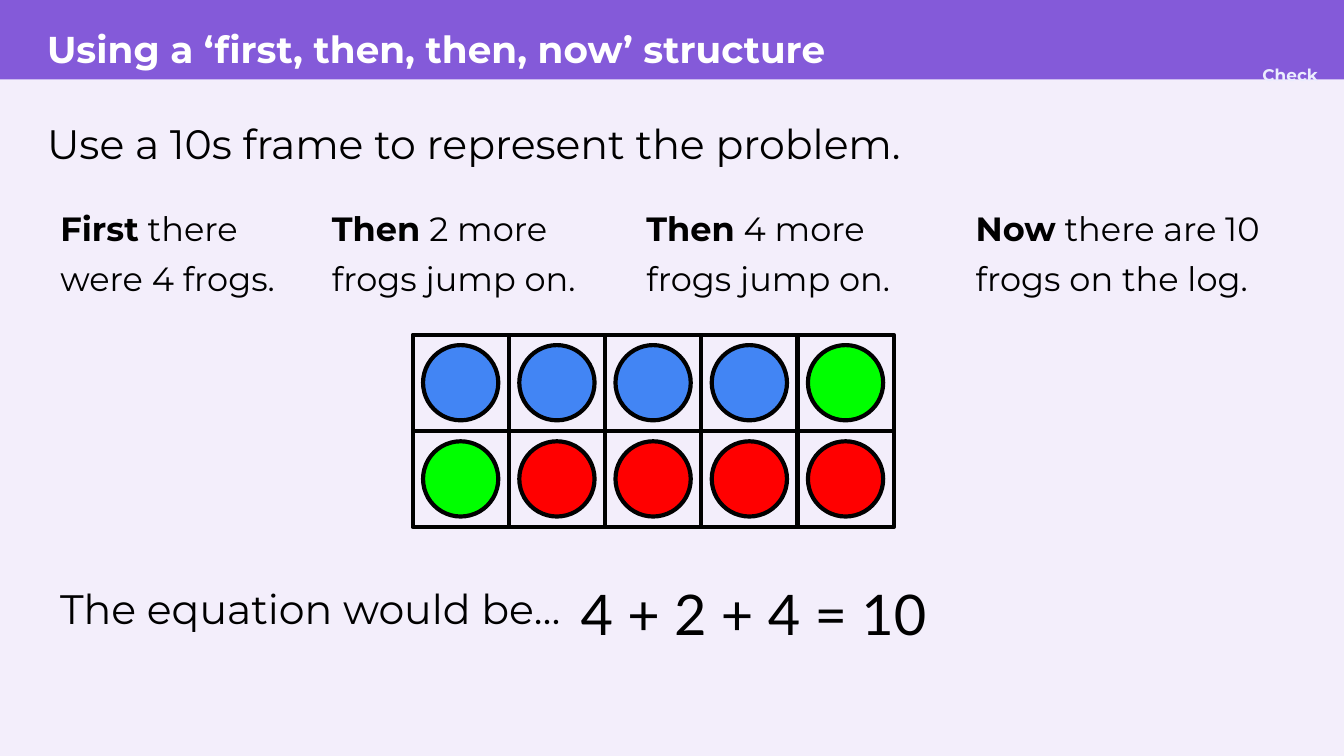
from pptx import Presentation
from pptx.dml.color import RGBColor
from pptx.enum.shapes import MSO_SHAPE
from pptx.enum.text import MSO_ANCHOR, MSO_AUTO_SIZE, PP_ALIGN
from pptx.oxml.ns import qn
from pptx.util import Inches, Pt

RECTANGLE, OVAL = MSO_SHAPE.RECTANGLE, MSO_SHAPE.OVAL
TOP, MIDDLE = MSO_ANCHOR.TOP, MSO_ANCHOR.MIDDLE
LEFT, CENTER = PP_ALIGN.LEFT, PP_ALIGN.CENTER
NO_AUTOFIT = MSO_AUTO_SIZE.NONE

BACKGROUND = RGBColor(0xF3, 0xEE, 0xFB)
PURPLE = RGBColor(0x84, 0x5A, 0xD9)
PALE = RGBColor(0xEB, 0xED, 0xFE)
WHITE = RGBColor(0xFF, 0xFF, 0xFF)
BLACK = RGBColor(0, 0, 0)
BLUE = RGBColor(0x42, 0x85, 0xF4)
GREEN = RGBColor(0, 0xFF, 0)
RED = RGBColor(0xFF, 0, 0)

# Content
TITLE = "Using a ‘first, then, then, now’ structure"
TAG = "Check"
INSTRUCTION = "Use a 10s frame to represent the problem."
STORY = [  # left, width, bold word, rest of the sentence
    (0.45, 1.86, "First", " there were 4 frogs."),
    (2.47, 2.18, "Then", " 2 more frogs jump on."),
    (4.81, 2.18, "Then", " 4 more frogs jump on."),
    (7.26, 2.42, "Now", " there are 10 frogs on the log."),
]
COUNTERS = [BLUE] * 4 + [GREEN] * 2 + [RED] * 4
EQUATION_LABEL = "The equation would be…"
EQUATION = "4 + 2 + 4 = 10"

# Ten frame geometry, in inches
FRAME_LEFT, FRAME_TOP, FRAME_WIDTH = 3.07, 2.49, 3.58
COLUMNS = 5
CELL = FRAME_WIDTH / COLUMNS
COUNTER = 0.56

BASE_FONT = {"name": "Montserrat", "size": Pt(22), "bold": False}


def place(shape, left, top, width, height):
    shape.left, shape.top = Inches(left), Inches(top)
    shape.width, shape.height = Inches(width), Inches(height)


def write(shape, runs, color=BLACK, anchor=TOP, align=LEFT,
          spacing=1.15, inset=0):
    """Fill a text shape with one paragraph of (text, font values) runs."""
    frame = shape.text_frame
    frame.word_wrap = True
    frame.auto_size = NO_AUTOFIT
    frame.vertical_anchor = anchor
    for side in ("left", "top", "right", "bottom"):
        setattr(frame, f"margin_{side}", Inches(inset))
    paragraph = frame.paragraphs[0]
    paragraph.alignment = align
    paragraph.line_spacing = spacing
    paragraph.space_before = Pt(0)
    for text, values in runs:
        run = paragraph.add_run()
        run.text = text
        for name, value in {**BASE_FONT, **values}.items():
            setattr(run.font, name, value)
        run.font.color.rgb = color
    return paragraph


def add_text(slide, position, runs, **options):
    box = slide.shapes.add_textbox(*map(Inches, position))
    write(box, runs, **options)


def add_figure(slide, kind, left, top, width, height, fill=None, line=None):
    shape = slide.shapes.add_shape(
        kind, Inches(left), Inches(top), Inches(width), Inches(height))
    shape.shadow.inherit = False
    if fill is None:
        shape.fill.background()
    else:
        shape.fill.solid()
        shape.fill.fore_color.rgb = fill
    if line is None:
        shape.line.fill.background()
    else:
        shape.line.color.rgb = line
        shape.line.width = Pt(2.25)
    return shape


def main():
    presentation = Presentation()
    presentation.slide_width = Inches(10)
    presentation.slide_height = Inches(10) * 9 // 16
    slide = presentation.slides.add_slide(presentation.slide_layouts[1])
    slide.background.fill.solid()
    slide.background.fill.fore_color.rgb = BACKGROUND

    # Header band, moved behind the placeholders
    band = add_figure(slide, RECTANGLE, 0, 0, 10, 0.59, fill=PURPLE)
    slide.shapes.title._element.addprevious(band._element)
    add_text(slide, (9.27, 0.48, 0.66, 0.15),
             [(TAG, {"size": Pt(9), "bold": True})],
             color=PALE, align=CENTER, spacing=1)

    # Title and instruction
    title, body = slide.placeholders
    place(title, 0.35, 0, 8.62, 0.67)
    write(title, [(TITLE, {"size": Pt(20), "bold": True})],
          color=WHITE, anchor=MIDDLE)
    place(body, 0.35, 0.83, 9.01, 0.51)
    paragraph = write(body, [(INSTRUCTION, {})])
    properties = paragraph._p.get_or_add_pPr()
    properties.set("marL", "0")
    properties.set("indent", "0")
    properties.append(properties.makeelement(qn("a:buNone"), {}))

    # Story sentences; the larger closing space sets the last line's height
    for left, width, lead, rest in STORY:
        add_text(slide, (left, 1.5, width, 0.83),
                 [(lead, {"size": Pt(18), "bold": True}),
                  (rest, {"size": Pt(18)}),
                  (" ", {"size": Pt(20)})])

    # Ten frame with one counter centred in each cell
    gap = (CELL - COUNTER) / 2
    for index, color in enumerate(COUNTERS):
        row, column = divmod(index, COLUMNS)
        left = FRAME_LEFT + column * CELL
        top = FRAME_TOP + row * CELL
        add_figure(slide, RECTANGLE, left, top, CELL, CELL, line=BLACK)
        add_figure(slide, OVAL, left + gap, top + gap, COUNTER, COUNTER,
                   fill=color, line=BLACK)

    # Equation
    add_text(slide, (0.35, 4.24, 4.97, 0.72), [(EQUATION_LABEL, {})],
             spacing=1, inset=0.1)
    add_text(slide, (4.32, 4.24, 2.91, 0.49),
             [(EQUATION, {"name": "Lato", "size": Pt(30)})])

    presentation.save("out.pptx")


if __name__ == "__main__":
    main()
